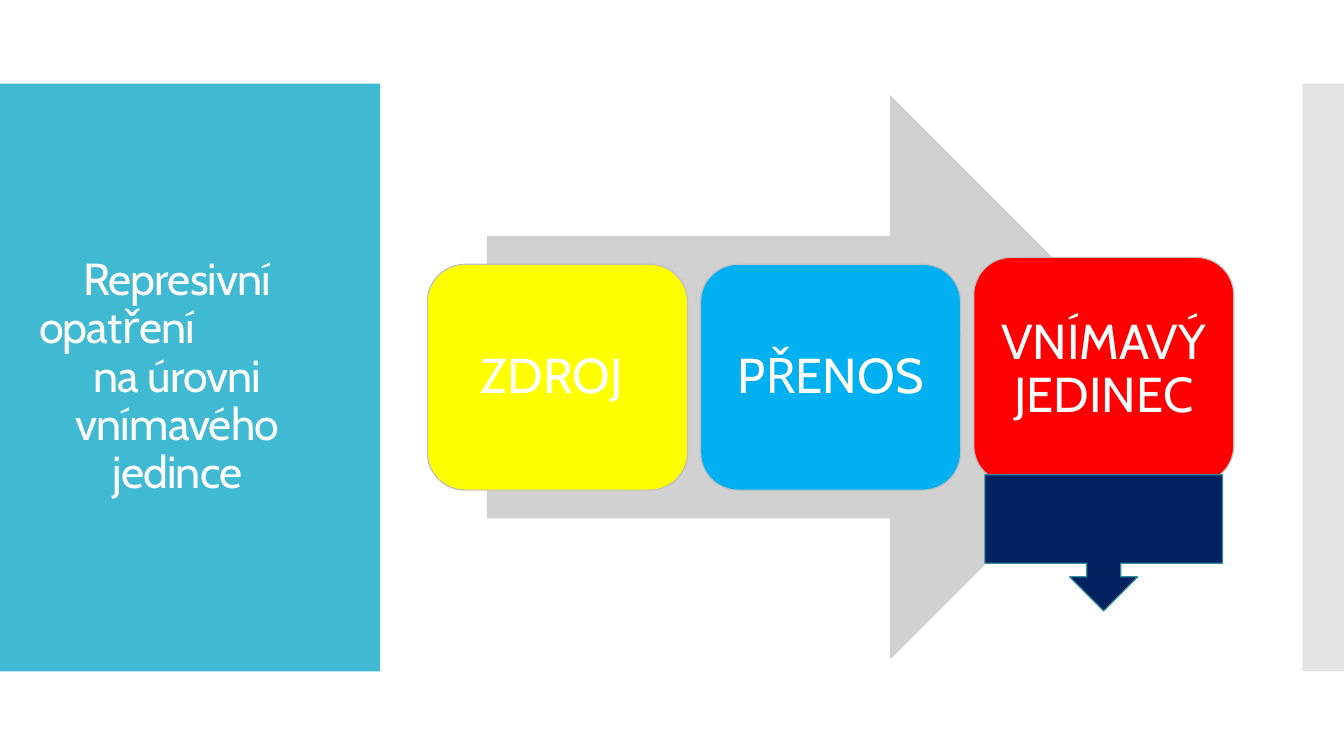
import pptx
import pptx.util
import pptx.dml.color
import pptx.enum.shapes
import pptx.enum.text
import pptx.oxml

Pt = pptx.util.Pt
SHAPE = pptx.enum.shapes.MSO_SHAPE
ALIGN = pptx.enum.text.PP_ALIGN
FONT = "Cabin"
COLORS = {
    "panel": "40BAD2",
    "edge": "C8C8C8",
    "arrow": "D1D1D1",
    "source": "FFFF00",
    "transfer": "00B0F0",
    "host": "FF0000",
    "card_line": "BFBFBF",
    "callout": "002060",
    "callout_line": "2F8A9B",
    "text": "FFFFFF",
}


def rgb(name):
    return pptx.dml.color.RGBColor.from_string(COLORS[name])


def add_shape(slide, kind, box, fill, line=None):
    """Add a flat preset shape; box is left, top, width, height in points."""
    shape = slide.shapes.add_shape(kind, *[Pt(length) for length in box])
    shape.shadow.inherit = False
    shape.fill.solid()
    shape.fill.fore_color.rgb = rgb(fill)
    if line:
        shape.line.color.rgb = rgb(line)
        shape.line.width = Pt(0.85)
    else:
        shape.line.fill.background()
    return shape


def prepare_frame(frame, inset_x, inset_y):
    frame.word_wrap = True
    frame.vertical_anchor = pptx.enum.text.MSO_ANCHOR.MIDDLE
    frame.margin_left = frame.margin_right = Pt(inset_x)
    frame.margin_top = frame.margin_bottom = Pt(inset_y)


def write(para, text, size, align=ALIGN.CENTER):
    para.alignment = align
    para.line_spacing = 0.9
    span = para.add_run()
    span.text = text
    span.font.name = FONT
    span.font.size = Pt(size)
    span.font.color.rgb = rgb("text")
    return span


def add_title_panel(slide, box):
    left, top, width, height = box
    add_shape(slide, SHAPE.RECTANGLE, box, "panel")
    title = slide.shapes.add_textbox(
        Pt(left + 10.8), Pt(top + 28.8), Pt(width - 39.6), Pt(height - 57.6))
    frame = title.text_frame
    prepare_frame(frame, 7.2, 3.6)
    lines = ["Represivní", "opatření", "na úrovni", "vnímavého", "jedince"]
    for index, text in enumerate(lines):
        para = frame.paragraphs[0] if index == 0 else frame.add_paragraph()
        outdented = text == "opatření"
        span = write(para, text, 32, ALIGN.LEFT if outdented else ALIGN.CENTER)
        span.font._element.set("spc", "-60")
        if outdented:
            para._p.get_or_add_pPr().set("marL", str(Pt(10)))


def add_edge_strip(slide, box):
    strip = add_shape(slide, SHAPE.RECTANGLE, box, "edge")
    color = strip.fill._xPr.find(".//" + pptx.oxml.ns.qn("a:srgbClr"))
    alpha = pptx.oxml.parse_xml(
        '<a:alpha xmlns:a="http://schemas.openxmlformats.org/drawingml/2006/main" val="50000"/>')
    color.append(alpha)


def add_process(slide, box):
    """Wide arrow with three cards and a callout under the last card."""
    left, top, width, height = box
    add_shape(slide, SHAPE.RIGHT_ARROW, (left + 42.5, top, 489.6, height), "arrow")
    card_width, card_height = 185.8, 161.3
    step = (width - card_width) / 2
    card_top = top + (height - card_height) / 2
    cards = [("ZDROJ ", "source", 0), ("PŘENOS", "transfer", 0),
             ("VNÍMAVÝ JEDINEC", "host", 5)]
    for index, (text, fill, lift) in enumerate(cards):
        card_left = left + index * step
        card = add_shape(slide, SHAPE.ROUNDED_RECTANGLE,
                         (card_left, card_top - lift, card_width, card_height),
                         fill, "card_line")
        prepare_frame(card.text_frame, 10.8, 10.8)
        write(card.text_frame.paragraphs[0], text, 35)
    add_shape(slide, SHAPE.DOWN_ARROW_CALLOUT,
              (card_left + 8, card_top + 150.3, card_width - 16, 97.2),
              "callout", "callout_line")


def main():
    deck = pptx.Presentation()
    deck.slide_width, deck.slide_height = Pt(960), Pt(540)
    slide = deck.slides.add_slide(deck.slide_layouts[6])
    add_title_panel(slide, (0, 59.8, 271.4, 419.8))
    add_edge_strip(slide, (930.2, 59.8, 29.8, 419.8))
    add_process(slide, (305.3, 67.9, 576, 403.2))
    deck.save("out.pptx")


if __name__ == "__main__":
    main()
